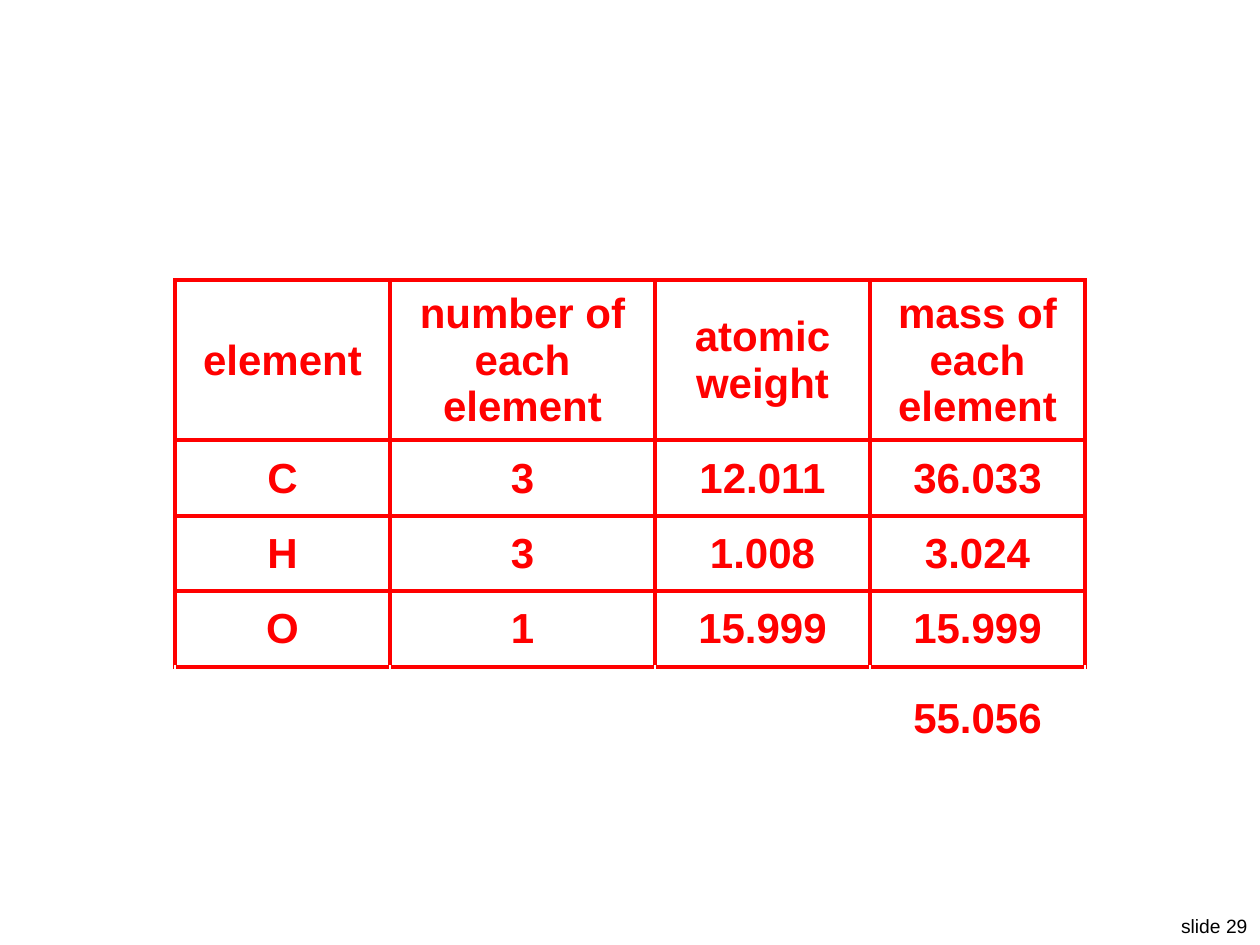
from pptx import Presentation
from pptx.dml.color import RGBColor
from pptx.enum.text import MSO_ANCHOR, MSO_AUTO_SIZE, PP_ALIGN
from pptx.oxml import parse_xml
from pptx.oxml.ns import nsdecls
from pptx.util import Inches, Pt

SCALE = Inches(1) / 126

THEME = {
    "font": "Arial",
    "red": "FF0000",
    "white": "FFFFFF",
    "black": "000000",
    "table_size": 24,
    "footer_size": 11,
    "rule": 2.25,
    "thin_rule": 1,
}

ROWS = [
    ("element", "number of each element", "atomic weight", "mass of each element"),
    ("C", "3", "12.011", "36.033"),
    ("H", "3", "1.008", "3.024"),
    ("O", "1", "15.999", "15.999"),
    ("", "", "", "55.056"),
]
COLUMN_WIDTHS = (215, 265, 215, 215)
ROW_HEIGHTS = (160, 76, 75, 76, 75)


def px(length):
    return round(length * SCALE)


def apply_format(target, values):
    for name, value in values.items():
        setattr(target, name, value)


def write_text(para, text, align, size, color, bold=False):
    para.alignment = align
    span = para.add_run()
    span.text = text
    apply_format(span.font, {"name": THEME["font"], "size": Pt(size), "bold": bold})
    span.font.color.rgb = RGBColor.from_string(color)


def set_borders(cell, is_total):
    properties = cell._tc.get_or_add_tcPr()
    for index, side in enumerate(("lnL", "lnR", "lnT", "lnB")):
        hidden = is_total and side != "lnT"
        color = THEME["white" if hidden else "red"]
        width = Pt(THEME["thin_rule" if hidden else "rule"])
        properties.insert(index, parse_xml(
            f'<a:{side} {nsdecls("a")} w="{width}"><a:solidFill>'
            f'<a:srgbClr val="{color}"/></a:solidFill></a:{side}>'))


def add_mass_table(page, left, top, width, height):
    frame = page.shapes.add_table(len(ROWS), len(COLUMN_WIDTHS),
                                  px(left), px(top), px(width), px(height))
    table = frame.table
    apply_format(table, {"first_row": False, "horz_banding": False})
    for column, column_width in zip(table.columns, COLUMN_WIDTHS):
        column.width = px(column_width)

    for row, row_height, texts in zip(table.rows, ROW_HEIGHTS, ROWS):
        row.height = px(row_height)
        is_total = texts is ROWS[-1]
        for cell, text in zip(row.cells, texts):
            apply_format(cell, {
                "margin_left": px(1), "margin_right": px(1),
                "margin_top": px(1), "margin_bottom": 0,
                "vertical_anchor": MSO_ANCHOR.BOTTOM if is_total else MSO_ANCHOR.MIDDLE,
            })
            cell.fill.background()
            set_borders(cell, is_total)
            if text:
                write_text(cell.text_frame.paragraphs[0], text, PP_ALIGN.CENTER,
                           THEME["table_size"], THEME["red"], bold=True)


def add_footer(page, left, top, width, height):
    box = page.shapes.add_textbox(px(left), px(top), px(width), px(height))
    apply_format(box.text_frame, {"word_wrap": False,
                                  "auto_size": MSO_AUTO_SIZE.SHAPE_TO_FIT_TEXT})
    write_text(box.text_frame.paragraphs[0], "slide 29", PP_ALIGN.RIGHT,
               THEME["footer_size"], THEME["black"])


def main():
    deck = Presentation()
    apply_format(deck, {"slide_width": px(1260), "slide_height": px(945)})
    page = deck.slides.add_slide(deck.slide_layouts[6])

    # Slide number at the bottom right
    add_footer(page, 1166, 908, 94, 37)

    # Mass of each element, with the total below
    add_mass_table(page, 175, 280, sum(COLUMN_WIDTHS), sum(ROW_HEIGHTS))

    deck.save("out.pptx")


if __name__ == "__main__":
    main()
